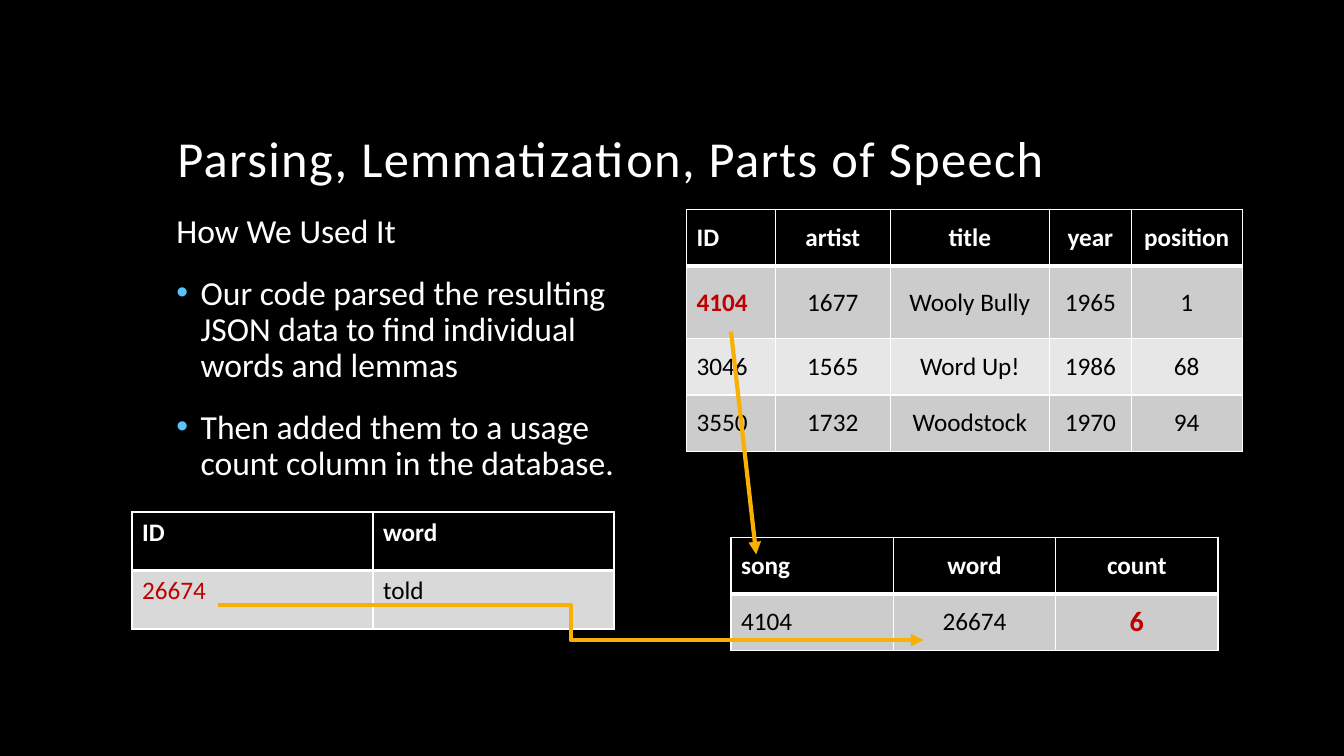
from lxml import etree
from pptx import Presentation
from pptx.dml.color import RGBColor
from pptx.enum.shapes import MSO_CONNECTOR
from pptx.enum.text import MSO_ANCHOR, MSO_AUTO_SIZE, PP_ALIGN
from pptx.oxml.ns import qn
from pptx.util import Inches, Pt

LEFT, CENTER = PP_ALIGN.LEFT, PP_ALIGN.CENTER
TOP, MIDDLE, BOTTOM = MSO_ANCHOR.TOP, MSO_ANCHOR.MIDDLE, MSO_ANCHOR.BOTTOM
STRAIGHT, ELBOW = MSO_CONNECTOR.STRAIGHT, MSO_CONNECTOR.ELBOW

BLACK = RGBColor(0x00, 0x00, 0x00)
WHITE = RGBColor(0xFF, 0xFF, 0xFF)
RED = RGBColor(0xC0, 0x00, 0x00)
BLUE = RGBColor(0x56, 0xC5, 0xFF)
AMBER = RGBColor(0xF8, 0xB0, 0x04)
GRAY = RGBColor(0xCC, 0xCC, 0xCC)
PALE_GRAY = RGBColor(0xE7, 0xE7, 0xE7)
MID_GRAY = RGBColor(0xD9, 0xD9, 0xD9)
FONT = "Calibri"

# Content
TITLE = "Parsing, Lemmatization, Parts of Speech"
SUBHEAD = "How We Used It"
BULLETS = [
    "Our code parsed the resulting JSON data to find individual words and lemmas",
    "Then added them to a usage count column in the database.",
]
# "marked" maps (row, column) to size and bold of a red cell
TABLES = [
    {
        "at": (6.81, 2.08),
        "columns": [0.88, 1.14, 1.58, 0.81, 1.1],
        "heights": [0.56, 0.72, 0.56, 0.56],
        "rows": [
            ["ID", "artist", "title", "year", "position"],
            ["4104", "1677", "Wooly Bully", "1965", "1"],
            ["3046", "1565", "Word Up!", "1986", "68"],
            ["3550", "1732", "Woodstock", "1970", "94"],
        ],
        "bands": (GRAY, PALE_GRAY),
        "align": CENTER, "anchor": MIDDLE,
        "marked": {(1, 0): (18, True)},
    },
    {
        "at": (7.25, 5.33),
        "columns": [1.61] * 3,
        "heights": [0.56] * 2,
        "rows": [["song", "word", "count"], ["4104", "26674", "6"]],
        "bands": (GRAY, PALE_GRAY),
        "align": CENTER, "anchor": MIDDLE,
        "marked": {(1, 2): (20, True)},
    },
    {
        "at": (1.31, 5.08),
        "columns": [2.39] * 2,
        "heights": [0.58] * 2,
        "rows": [["ID", "word"], ["26674", "told"]],
        "bands": (MID_GRAY, MID_GRAY),
        "align": LEFT, "anchor": TOP,
        "marked": {(1, 0): (18, False)},
    },
]
ARROWS = [
    (STRAIGHT, (7.25, 3.29), (7.5, 5.5)),
    (ELBOW, (2.16, 6), (9.16, 6.35)),
]


def add_run(para, text, size, color, bold=False):
    span = para.add_run()
    span.text = text
    span.font.name = FONT
    span.font.size = Pt(size)
    span.font.bold = bold
    span.font.color.rgb = color
    return span


def place(shape, left, top, width, height):
    shape.left, shape.top = Inches(left), Inches(top)
    shape.width, shape.height = Inches(width), Inches(height)


def set_bullet(para, char=None):
    props = para._p.get_or_add_pPr()
    indent = Inches(0.24) if char else 0
    props.set("marL", str(indent))
    props.set("indent", str(-indent))
    if char is None:
        etree.SubElement(props, qn("a:buNone"))
        return
    color = etree.SubElement(props, qn("a:buClr"))
    etree.SubElement(color, qn("a:srgbClr"), val=str(BLUE))
    etree.SubElement(props, qn("a:buFont"), typeface="Arial")
    etree.SubElement(props, qn("a:buChar"), char=char)


def set_borders(cell, row):
    """White grid with a thick rule under the header row."""
    widths = {"L": 1, "R": 1, "T": 3 if row == 1 else 1, "B": 3 if row == 0 else 1}
    props = cell._tc.get_or_add_tcPr()
    for side, width in widths.items():
        line = etree.SubElement(props, qn("a:ln" + side), w=str(Pt(width)))
        fill = etree.SubElement(line, qn("a:solidFill"))
        etree.SubElement(fill, qn("a:srgbClr"), val=str(WHITE))


def add_grid(page, grid):
    rows, columns, heights = grid["rows"], grid["columns"], grid["heights"]
    left, top = grid["at"]
    table = page.shapes.add_table(
        len(rows), len(columns), Inches(left), Inches(top),
        Inches(sum(columns)), Inches(sum(heights))).table
    for column, width in zip(table.columns, columns):
        column.width = Inches(width)
    for r, (texts, height) in enumerate(zip(rows, heights)):
        table.rows[r].height = Inches(height)
        for c, text in enumerate(texts):
            cell = table.cell(r, c)
            set_borders(cell, r)
            cell.fill.solid()
            cell.fill.fore_color.rgb = grid["bands"][(r - 1) % 2] if r else BLACK
            cell.vertical_anchor = grid["anchor"]
            para = cell.text_frame.paragraphs[0]
            para.alignment = grid["align"] if c else LEFT
            if (r, c) in grid["marked"]:
                size, bold = grid["marked"][r, c]
                add_run(para, text, size, RED, bold)
            else:
                add_run(para, text, 18, BLACK if r else WHITE, r == 0)


def add_arrow(page, kind, start, end):
    arrow = page.shapes.add_connector(kind, *(Inches(v) for v in start + end))
    arrow.line.color.rgb = AMBER
    arrow.line.width = Pt(3)
    etree.SubElement(arrow.line._get_or_add_ln(), qn("a:tailEnd"), type="triangle")
    etree.SubElement(arrow._element.spPr, qn("a:effectLst"))


def main():
    deck = Presentation()
    deck.slide_width, deck.slide_height = Inches(13.33), Inches(7.5)
    page = deck.slides.add_slide(deck.slide_layouts[1])
    page.background.fill.solid()
    page.background.fill.fore_color.rgb = BLACK

    # Title
    title = page.shapes.title
    place(title, 1.66, 0.42, 10, 1.5)
    title.text_frame.vertical_anchor = BOTTOM
    title.text_frame.auto_size = MSO_AUTO_SIZE.NONE
    para = title.text_frame.paragraphs[0]
    para.alignment = LEFT
    para.line_spacing = 0.9
    span = add_run(para, TITLE, 36, WHITE)
    span.font._element.set("spc", "100")

    # Subhead and bullets
    body = page.placeholders[1]
    place(body, 1.65, 2.08, 4.83, 4.5)
    frame = body.text_frame
    frame.auto_size = MSO_AUTO_SIZE.NONE
    frame.vertical_anchor = TOP
    for i, text in enumerate([SUBHEAD] + BULLETS):
        para = frame.add_paragraph() if i else frame.paragraphs[0]
        set_bullet(para, "•" if i else None)
        para.line_spacing = 0.9
        para.space_before = Pt(18 if i else 0)
        add_run(para, text, 24, WHITE)

    # Tables and the arrows that link their keys
    for grid in TABLES:
        add_grid(page, grid)
    for kind, start, end in ARROWS:
        add_arrow(page, kind, start, end)

    deck.save("out.pptx")


if __name__ == "__main__":
    main()
